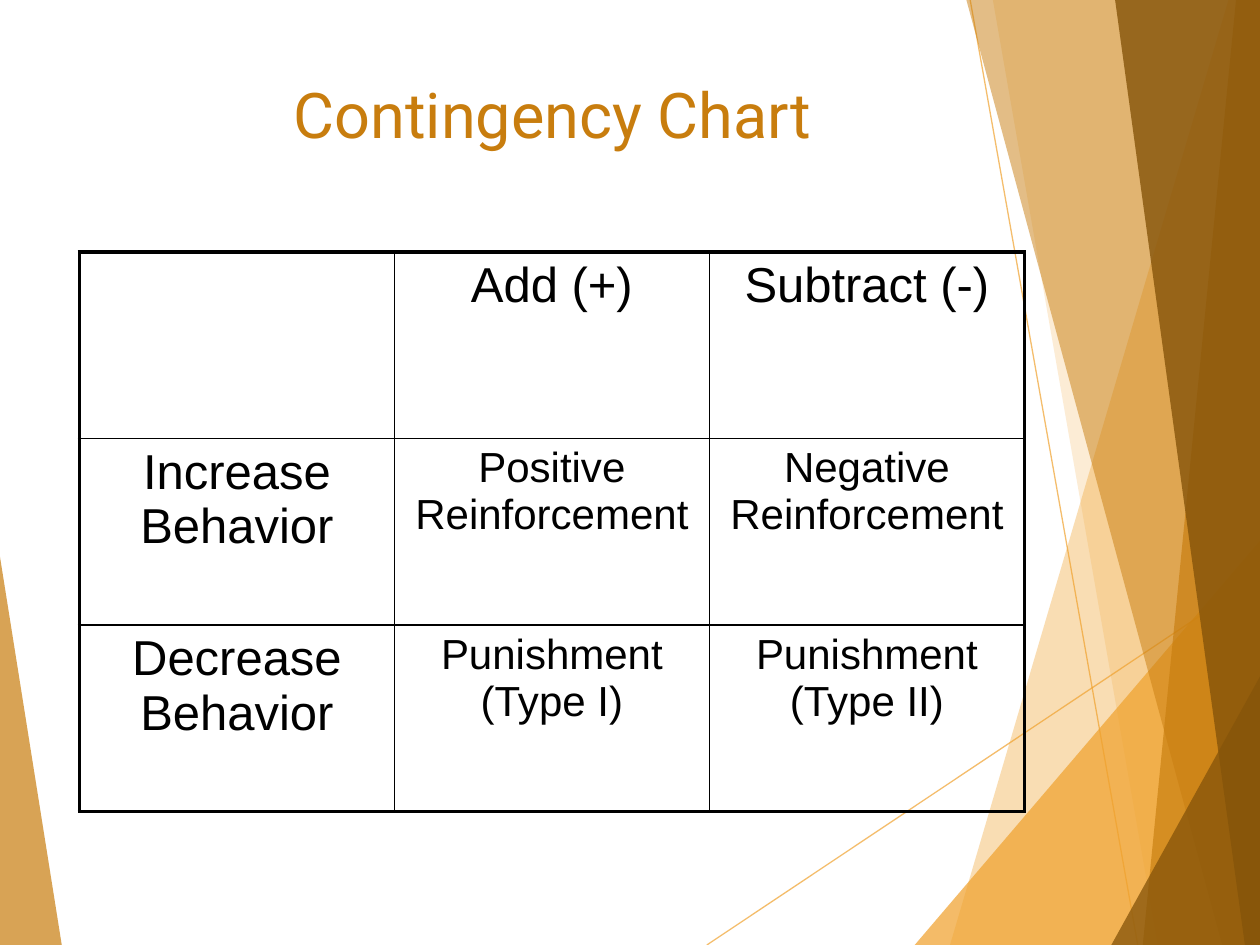
import pptx
import pptx.util
import pptx.dml.color
import pptx.enum.shapes
import pptx.enum.text
import pptx.oxml
from dataclasses import dataclass
from lxml import etree
from pptx.oxml.ns import qn
from pptx.util import Inches


@dataclass(frozen=True)
class Theme:
    """Colours, fonts and type sizes of the slide."""
    gold: str = "F0A22E"
    amber: str = "C87D0E"
    brown: str = "85540A"
    black: str = "000000"
    head_font: str = "Roboto"
    body_font: str = "Arial"
    head_size: int = 36
    label_size: int = 28
    cell_size: int = 24
    frame: float = 2.25
    grid: float = 1


THEME = Theme()
WIDE, HIGH = 10, 7.5
LINES = [((5.61, HIGH), (WIDE, 4.57)), ((7.7, 0), (9.03, HIGH))]
SHARDS = [
    (THEME.gold, 36, [(9.75, 0), (7.54, HIGH), (WIDE, HIGH), (WIDE, 0)]),
    (THEME.gold, 20, [(7.88, 0), (9.19, HIGH), (WIDE, HIGH), (WIDE, 0)]),
    (THEME.gold, 72, [(7.26, HIGH), (WIDE, 4.29), (WIDE, HIGH)]),
    (THEME.amber, 50, [(7.67, 0), (9.7, HIGH), (WIDE, HIGH), (WIDE, 0)]),
    (THEME.amber, 66, [(9.81, 0), (9.07, HIGH), (WIDE, HIGH), (WIDE, 0)]),
    (THEME.brown, 80, [(8.85, 0), (9.88, HIGH), (WIDE, HIGH), (WIDE, 0)]),
    (THEME.brown, 76, [(8.82, HIGH), (WIDE, 5.37), (WIDE, HIGH)]),
    (THEME.amber, 70, [(0, 4.42), (0.49, HIGH), (0, HIGH)]),
]
ROWS = [
    ["", "Add (+)", "Subtract (-)"],
    ["Increase Behavior", "Positive Reinforcement", "Negative Reinforcement"],
    ["Decrease Behavior", "Punishment (Type I)", "Punishment (Type II)"],
]


def shade(code):
    """Turn a hex code into a colour."""
    return pptx.dml.color.RGBColor.from_string(code)


def fade(shape, cover):
    """Set how opaque the shape's colour is, in percent."""
    tone = next(shape._element.spPr.iter(qn("a:srgbClr")))
    etree.SubElement(tone, qn("a:alpha"), val=str(cover * 1000))


def style(frame, font, size, code):
    """Centre the text and format its runs."""
    for para in frame.paragraphs:
        para.alignment = pptx.enum.text.PP_ALIGN.CENTER
        for run in para.runs:
            run.font.name = font
            run.font.size = pptx.util.Pt(size)
            run.font.color.rgb = shade(code)


def add_line(slide, start, end):
    """Draw a thin gold line."""
    kind = pptx.enum.shapes.MSO_CONNECTOR.STRAIGHT
    line = slide.shapes.add_connector(kind, *map(Inches, start + end))
    line.line.color.rgb = shade(THEME.gold)
    line.line.width = pptx.util.Pt(0.75)
    fade(line, 70)
    etree.SubElement(line._element.spPr, qn("a:effectLst"))


def add_shard(slide, code, cover, points):
    """Draw a see-through polygon."""
    first, *rest = [(Inches(x), Inches(y)) for x, y in points]
    pen = slide.shapes.build_freeform(*first)
    pen.add_line_segments(rest, close=True)
    shard = pen.convert_to_shape()
    shard.shadow.inherit = False
    shard.fill.solid()
    shard.fill.fore_color.rgb = shade(code)
    shard.line.fill.background()
    fade(shard, cover)


def set_title(slide, text):
    """Fill, place and raise the title."""
    title = slide.shapes.title
    title.left, title.top = Inches(0), Inches(0.25)
    title.width, title.height = Inches(8.77), Inches(1)
    title.text_frame.text = text
    title.text_frame.vertical_anchor = pptx.enum.text.MSO_ANCHOR.BOTTOM
    style(title.text_frame, THEME.head_font, THEME.head_size, THEME.amber)
    slide.shapes._spTree.append(title._element)


def set_edges(cell, outer):
    """Draw the four cell borders, thicker on the outer sides."""
    props = cell._tc.get_or_add_tcPr()
    for spot, (side, thick) in enumerate(outer.items()):
        width = pptx.util.Pt(THEME.frame if thick else THEME.grid)
        edge = etree.Element(qn("a:ln" + side), w=str(int(width)))
        fill = etree.SubElement(edge, qn("a:solidFill"))
        etree.SubElement(fill, qn("a:srgbClr"), val=THEME.black)
        props.insert(spot, edge)


def add_grid(slide, rows):
    """Add the table with a heavy frame and thin inner lines."""
    last_row, last_col = len(rows) - 1, len(rows[0]) - 1
    table = slide.shapes.add_table(
        len(rows), len(rows[0]),
        Inches(0.63), Inches(2), Inches(7.5), Inches(4.44)).table
    table.first_row = table.horz_banding = False
    for r, row in enumerate(rows):
        for c, text in enumerate(row):
            cell = table.cell(r, c)
            cell.fill.background()
            cell.text_frame.text = text
            label = r == 0 or c == 0
            size = THEME.label_size if label else THEME.cell_size
            style(cell.text_frame, THEME.body_font, size, THEME.black)
            set_edges(cell, {"L": c == 0, "R": c == last_col,
                             "T": r == 0, "B": r == last_row})


def main():
    """Build and save the slide."""
    deck = pptx.Presentation()
    deck.slide_width, deck.slide_height = Inches(WIDE), Inches(HIGH)
    slide = deck.slides.add_slide(deck.slide_layouts[5])
    for start, end in LINES:
        add_line(slide, start, end)
    for shard in SHARDS:
        add_shard(slide, *shard)
    set_title(slide, "Contingency Chart")
    add_grid(slide, ROWS)
    deck.save("out.pptx")


if __name__ == "__main__":
    main()
